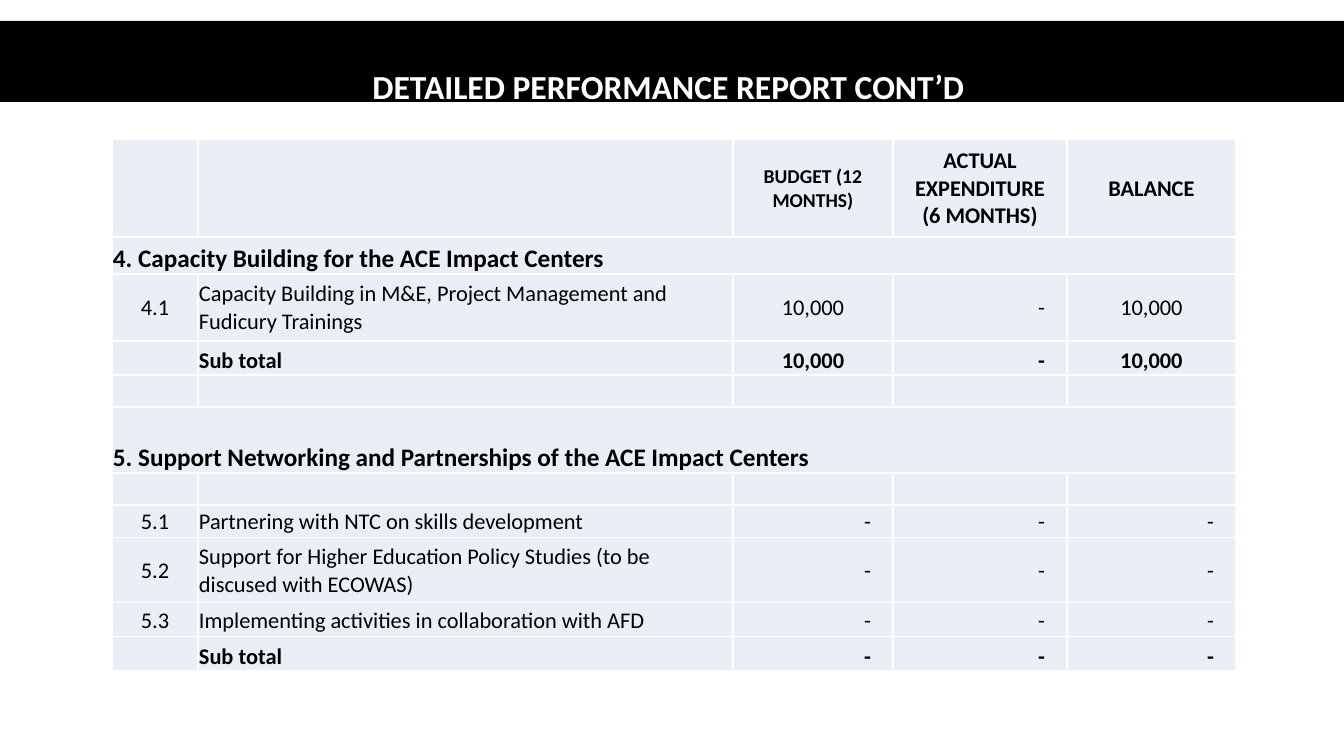
from lxml import etree
from pptx import Presentation
from pptx.dml.color import RGBColor
from pptx.enum.shapes import MSO_SHAPE
from pptx.enum.text import MSO_ANCHOR, PP_ALIGN
from pptx.oxml.ns import qn
from pptx.util import Emu, Pt

RECTANGLE = MSO_SHAPE.RECTANGLE
TOP, MIDDLE, BOTTOM = MSO_ANCHOR.TOP, MSO_ANCHOR.MIDDLE, MSO_ANCHOR.BOTTOM
LEFT, CENTER, RIGHT = PP_ALIGN.LEFT, PP_ALIGN.CENTER, PP_ALIGN.RIGHT

BLACK = RGBColor(0x00, 0x00, 0x00)
WHITE = RGBColor(0xFF, 0xFF, 0xFF)
PALE_BLUE = RGBColor(0xEA, 0xEF, 0xF7)
FONT = "Calibri"

# Content: row kind, height in px, cell texts
TITLE = "DETAILED PERFORMANCE REPORT CONT’D"
ROWS = [
    ("header", 98, ["", "", "BUDGET (12 MONTHS)",
                    "ACTUAL EXPENDITURE\v(6 MONTHS)", "BALANCE"]),
    ("section", 37, ["4. Capacity Building for the ACE Impact Centers"]),
    ("item", 67, ["4.1", "Capacity Building in M&E, Project Management and "
                  "Fudicury Trainings", "10,000", "-", "10,000"]),
    ("total", 34, ["", "Sub total", "10,000", "-", "10,000"]),
    ("item", 32, []),
    ("section", 66, ["5. Support Networking and Partnerships of the "
                     "ACE Impact Centers"]),
    ("item", 32, []),
    ("item", 33, ["5.1", "Partnering with NTC on skills development",
                  "-", "-", "-"]),
    ("item", 65, ["5.2", "Support for Higher Education Policy Studies "
                  "(to be discused with ECOWAS)", "-", "-", "-"]),
    ("item", 34, ["5.3", "Implementing activities in collaboration with AFD",
                  "-", "-", "-"]),
    ("total", 34, ["", "Sub total", "-", "-", "-"]),
]
COLUMN_WIDTHS = [86, 535, 160, 174, 169]
TEXT_COLUMN, BUDGET_COLUMN = 1, 2

# Row kind: text size, bold, anchor
ROW_FORMATS = {
    "header": (16, True, MIDDLE),
    "section": (18, True, BOTTOM),
    "item": (16, False, MIDDLE),
    "total": (16, True, BOTTOM),
}

# Layout in px
SLIDE_WIDTH, SLIDE_HEIGHT = 1344, 756
BANNER_TOP, BANNER_HEIGHT = 21, 81
TABLE_LEFT, TABLE_TOP = 112, 139
CELL_INSET, DASH_INSET = 1, 22
TITLE_RIGHT_INSET = 17


def px(value):
    return Emu(round(value * 914400 / 100.8))


def set_all(target, values):
    for name, value in values.items():
        setattr(target, name, value)


def write(paragraph, text, size, bold, color, alignment):
    paragraph.text = text
    paragraph.alignment = alignment
    for run in paragraph.runs:
        set_all(run.font, {"name": FONT, "size": Pt(size), "bold": bold})
        run.font.color.rgb = color
    if not text:
        etree.SubElement(paragraph._p, qn("a:endParaRPr"), sz=str(size * 100))


def add_borders(cell):
    properties = cell._tc.get_or_add_tcPr()
    for side in ("lnL", "lnR", "lnT", "lnB"):
        line = etree.SubElement(properties, qn("a:" + side), w=str(Pt(1)))
        fill = etree.SubElement(line, qn("a:solidFill"))
        etree.SubElement(fill, qn("a:srgbClr"), val=str(WHITE))


def cell_alignment(kind, column, text):
    if kind == "section" or column == TEXT_COLUMN:
        return LEFT
    return RIGHT if text == "-" else CENTER


def add_banner(slide):
    banner = slide.shapes.add_shape(
        RECTANGLE, 0, px(BANNER_TOP), px(SLIDE_WIDTH), px(BANNER_HEIGHT))
    banner.shadow.inherit = False
    banner.fill.solid()
    banner.fill.fore_color.rgb = BLACK
    banner.line.fill.background()
    set_all(banner.text_frame, {"word_wrap": True, "vertical_anchor": TOP,
                                "margin_right": px(TITLE_RIGHT_INSET)})
    paragraph = banner.text_frame.paragraphs[0]
    write(paragraph, TITLE, 24, True, WHITE, CENTER)
    paragraph.line_spacing = 2.0


def add_budget_table(slide):
    heights = [height for _, height, _ in ROWS]
    table = slide.shapes.add_table(
        len(ROWS), len(COLUMN_WIDTHS), px(TABLE_LEFT), px(TABLE_TOP),
        px(sum(COLUMN_WIDTHS)), px(sum(heights))).table
    set_all(table, {"first_row": False, "horz_banding": False})
    for column, width in zip(table.columns, COLUMN_WIDTHS):
        column.width = px(width)

    last = len(COLUMN_WIDTHS) - 1
    for row, (kind, height, texts) in enumerate(ROWS):
        table.rows[row].height = px(height)
        size, bold, anchor = ROW_FORMATS[kind]
        for column in range(last + 1):
            text = texts[column] if column < len(texts) else ""
            cell = table.cell(row, column)
            set_all(cell, {
                "vertical_anchor": anchor,
                "margin_left": px(CELL_INSET),
                "margin_right": px(DASH_INSET if text == "-" else CELL_INSET),
                "margin_top": px(CELL_INSET),
                "margin_bottom": 0,
            })
            add_borders(cell)
            cell.fill.solid()
            cell.fill.fore_color.rgb = PALE_BLUE
            smaller = kind == "header" and column == BUDGET_COLUMN
            write(cell.text_frame.paragraphs[0], text, 14 if smaller else size,
                  bold, BLACK, cell_alignment(kind, column, text))
        if kind == "section":
            table.cell(row, 0).merge(table.cell(row, last))


def main():
    presentation = Presentation()
    set_all(presentation, {"slide_width": px(SLIDE_WIDTH),
                           "slide_height": px(SLIDE_HEIGHT)})
    slide = presentation.slides.add_slide(presentation.slide_layouts[6])
    add_banner(slide)
    add_budget_table(slide)
    presentation.save("out.pptx")


if __name__ == "__main__":
    main()
